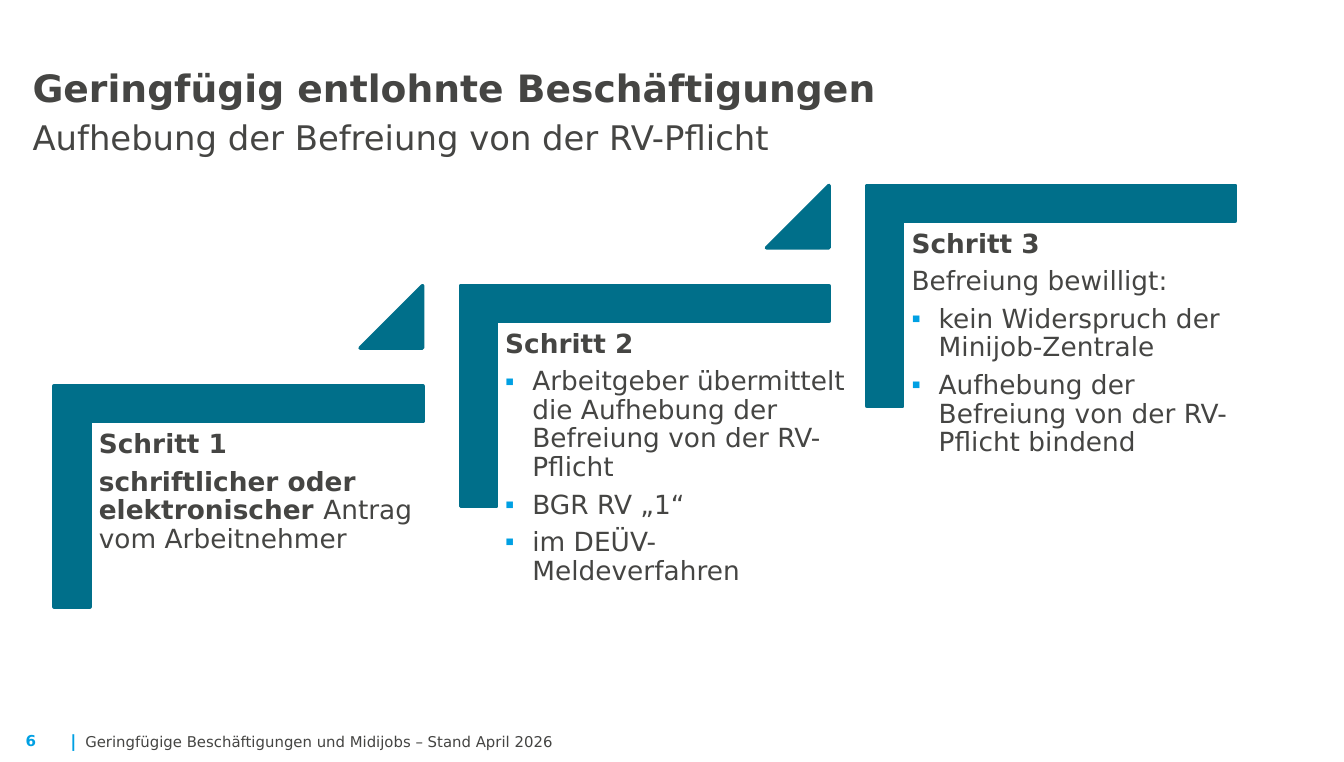
from pptx import Presentation
from pptx.dml.color import RGBColor
from pptx.enum.shapes import MSO_SHAPE as Shape
from pptx.enum.text import MSO_ANCHOR as Anchor, MSO_AUTO_SIZE as AutoSize, PP_ALIGN as Align
from pptx.oxml import parse_xml
from pptx.oxml.ns import nsdecls
from pptx.util import Inches, Pt

FONT, BULLET_FONT = "DejaVu Sans", "Arial"
DARK, TEAL, BLUE = "454543", "006F8A", "00A0E3"
STEP_LEFT, STEP_TOP, STEP_WIDTH, STEP_HEIGHT = 0.4, 2.85, 2.72, 1.63
STEP_ACROSS, STEP_RISE = 3.0, 0.74
ARROW_SIZE = 0.46

STEPS = [
    (2.45, [
        (False, [("Schritt 1", True)]),
        (False, [("schriftlicher oder elektronischer ", True),
                 ("Antrag vom Arbeitnehmer", False)]),
    ]),
    (2.72, [
        (False, [("Schritt 2", True)]),
        (True, [("Arbeitgeber übermittelt die Aufhebung der Befreiung von der RV-Pflicht", False)]),
        (True, [("BGR RV „1“", False)]),
        (True, [("im DEÜV-Meldeverfahren", False)]),
    ]),
    (2.45, [
        (False, [("Schritt 3", True)]),
        (False, [("Befreiung bewilligt:", False)]),
        (True, [("kein Widerspruch der Minijob-Zentrale", False)]),
        (True, [("Aufhebung der Befreiung von der RV-Pflicht bindend", False)]),
    ]),
]


def color(value):
    """Turn a hex string into a colour."""
    return RGBColor.from_string(value)


def add_run(paragraph, text, size, bold=False, fill=DARK):
    """Append one formatted run to a paragraph."""
    run = paragraph.add_run()
    run.text = text
    font = run.font
    font.name, font.size, font.bold = FONT, Pt(size), bold
    font.color.rgb = color(fill)


def set_frame(frame, inset, anchor=Anchor.TOP, wrap=True):
    """Set insets, anchor and wrapping of a text frame."""
    frame.auto_size = AutoSize.NONE
    frame.word_wrap = wrap
    frame.vertical_anchor = anchor
    frame.margin_left = frame.margin_right = Inches(inset)
    frame.margin_top = frame.margin_bottom = Inches(inset)


def add_text_box(slide, left, top, width, height, inset=0, anchor=Anchor.TOP, wrap=True):
    """Add an empty text box and return its frame."""
    box = slide.shapes.add_textbox(Inches(left), Inches(top), Inches(width), Inches(height))
    set_frame(box.text_frame, inset, anchor, wrap)
    return box.text_frame


def add_solid(slide, kind, left, top, width, height):
    """Add a teal preset shape without shadow."""
    shape = slide.shapes.add_shape(kind, Inches(left), Inches(top), Inches(width), Inches(height))
    shape.shadow.inherit = False
    shape.fill.solid()
    shape.fill.fore_color.rgb = color(TEAL)
    shape.line.color.rgb = color(TEAL)
    shape.line.width = Pt(2)
    return shape


def add_bullet(paragraph):
    """Give a paragraph a blue square bullet with a hanging indent."""
    properties = paragraph._p.get_or_add_pPr()
    properties.set("marL", str(Inches(0.2)))
    properties.set("indent", str(-Inches(0.2)))
    properties.append(parse_xml(
        f'<a:buClr {nsdecls("a")}><a:srgbClr val="{BLUE}"/></a:buClr>'))
    properties.append(parse_xml(f'<a:buFont {nsdecls("a")} typeface="{BULLET_FONT}"/>'))
    properties.append(parse_xml(f'<a:buChar {nsdecls("a")} char="▪"/>'))


def build_title(slide, left, top, width, height):
    """Fill the title placeholder with heading and subheading."""
    title = slide.shapes.title
    title.left, title.top = Inches(left), Inches(top)
    title.width, title.height = Inches(width), Inches(height)
    set_frame(title.text_frame, 0, Anchor.BOTTOM)
    paragraph = title.text_frame.paragraphs[0]
    paragraph.alignment = Align.LEFT
    paragraph.line_spacing = 1.15
    paragraph.space_after = Pt(8)
    add_run(paragraph, "Geringfügig entlohnte Beschäftigungen", 20, True)
    paragraph.add_line_break()
    add_run(paragraph, "Aufhebung der Befreiung von der RV-Pflicht", 18)


def build_step(slide, left, top, text_width, paragraphs):
    """Draw one stair corner with its text inside."""
    turn = (STEP_WIDTH - STEP_HEIGHT) / 2
    corner = add_solid(slide, Shape.CORNER, left + turn, top - turn, STEP_HEIGHT, STEP_WIDTH)
    corner.rotation = 90
    corner.adjustments[0] = corner.adjustments[1] = 0.161
    frame = add_text_box(slide, left + 0.27, top + 0.27, text_width, 2.15, inset=0.06)
    for index, (bulleted, runs) in enumerate(paragraphs):
        paragraph = frame.add_paragraph() if index else frame.paragraphs[0]
        paragraph.line_spacing = 0.9
        paragraph.space_after = Pt(4.9)
        if bulleted:
            add_bullet(paragraph)
        for text, bold in runs:
            add_run(paragraph, text, 14, bold)


def build_stairs(slide, left, top):
    """Place the rising steps and the triangles between them."""
    for index, (text_width, paragraphs) in enumerate(STEPS):
        step_left = left + index * STEP_ACROSS
        step_top = top - index * STEP_RISE
        build_step(slide, step_left, step_top, text_width, paragraphs)
        if index < len(STEPS) - 1:
            arrow = add_solid(slide, Shape.ISOSCELES_TRIANGLE,
                              step_left + STEP_WIDTH - ARROW_SIZE, step_top - STEP_RISE,
                              ARROW_SIZE, ARROW_SIZE)
            arrow.adjustments[0] = 1


def build_footer(slide, left, top):
    """Write page number, divider and footer text."""
    number = add_text_box(slide, left, top, 0.28, 0.24, wrap=False)
    number.margin_left = number.margin_right = Inches(0.1)
    number.margin_top = number.margin_bottom = Inches(0.05)
    add_run(number.paragraphs[0], "6", 8, True, BLUE)
    divider = add_text_box(slide, left + 0.43, top + 0.04, 0.06, 0.15,
                           anchor=Anchor.BOTTOM, wrap=False)
    add_run(divider.paragraphs[0], "|", 8.9, True, BLUE)
    footer = add_text_box(slide, left + 0.54, top + 0.04, 9.06, 0.15, anchor=Anchor.BOTTOM)
    add_run(footer.paragraphs[0],
            "Geringfügige Beschäftigungen und Midijobs – Stand April 2026", 7.9)


def main():
    """Build and save the presentation."""
    presentation = Presentation()
    presentation.slide_width = Inches(9.922)
    presentation.slide_height = Inches(5.625)
    slide = presentation.slides.add_slide(presentation.slide_layouts[5])
    build_title(slide, 0.24, 0.45, 8.51, 0.71)
    build_stairs(slide, STEP_LEFT, STEP_TOP)
    build_footer(slide, 0.09, 5.35)
    presentation.save("out.pptx")


if __name__ == "__main__":
    main()
